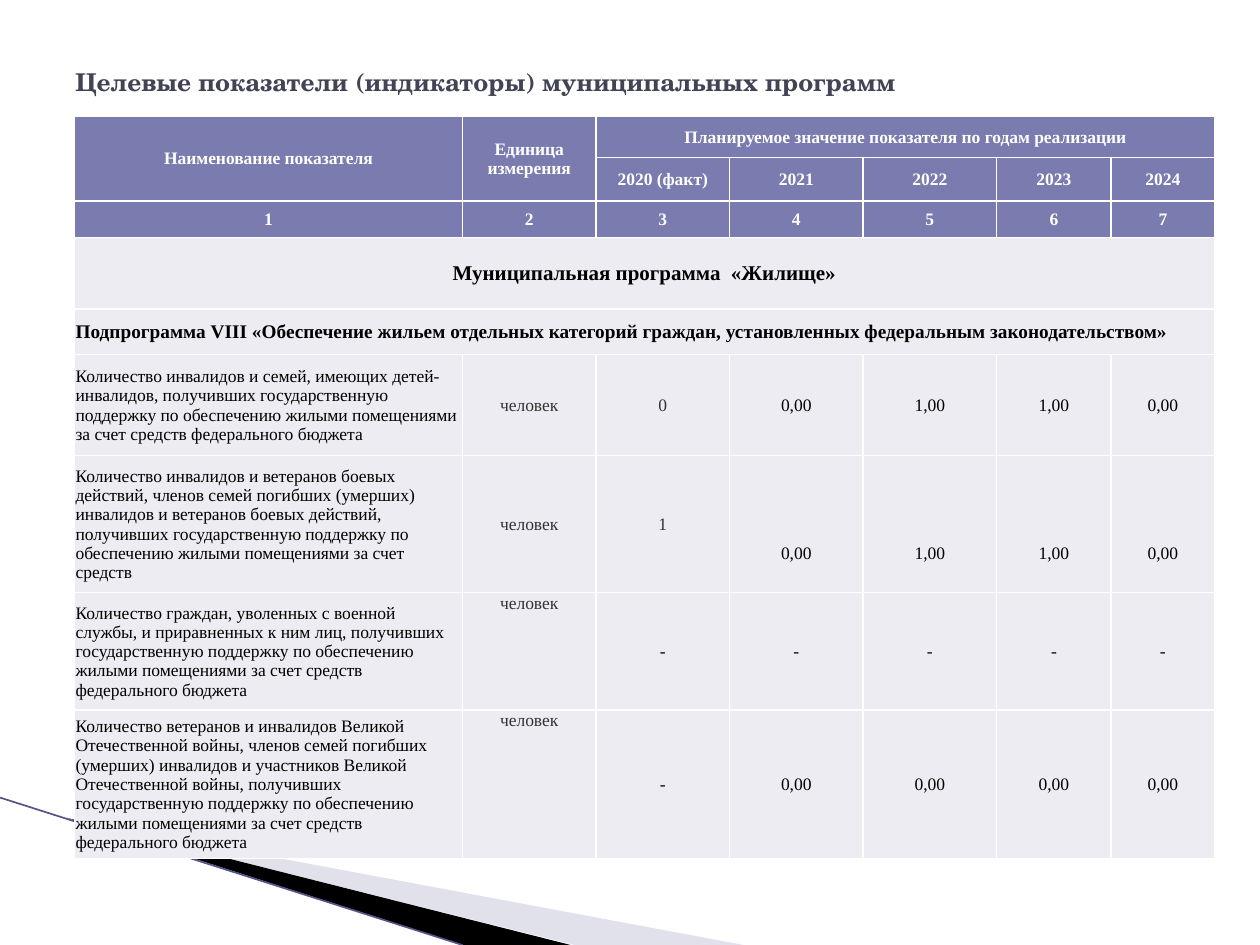
"""Build a slide with a table of municipal programme targets."""
from lxml import etree
from pptx import Presentation
from pptx.dml.color import RGBColor
from pptx.enum import shapes, text
from pptx.oxml import parse_xml
from pptx.oxml.ns import nsdecls, qn
from pptx.util import Inches, Pt

WHITE = RGBColor(0xFF, 0xFF, 0xFF)
BLACK = RGBColor(0, 0, 0)
GREY = RGBColor(0x33, 0x33, 0x33)
SLATE = RGBColor(0x42, 0x44, 0x56)
HEAD = RGBColor(0x7A, 0x7B, 0xAE)
PALE = RGBColor(0xEC, 0xEC, 0xF2)
LILAC = RGBColor(0xB6, 0xB6, 0xD1)
INDIGO = RGBColor(0x53, 0x54, 0x8A)
MID, TOP = text.MSO_ANCHOR.MIDDLE, text.MSO_ANCHOR.TOP
LEFT, MIDST = text.PP_ALIGN.LEFT, text.PP_ALIGN.CENTER


def write(frame, words, size=10, color=BLACK, bold=False, align=MIDST,
          face="Times New Roman"):
    para = frame.paragraphs[0]
    para.alignment = align
    run = para.add_run()
    run.text = words
    font = run.font
    font.name, font.size, font.bold = face, Pt(size), bold
    font.color.rgb = color


def dress(cell, fill, anchor=MID, top=0.01):
    cell.margin_left = cell.margin_right = Inches(0.01)
    cell.margin_top, cell.margin_bottom = Inches(top), 0
    cell.vertical_anchor = anchor
    props = cell._tc.get_or_add_tcPr()
    for side in "LRTB":
        props.append(parse_xml(
            f'<a:ln{side} {nsdecls("a")} w="12700"><a:solidFill>'
            f'<a:srgbClr val="{WHITE}"/></a:solidFill></a:ln{side}>'))
    cell.fill.solid()
    cell.fill.fore_color.rgb = fill


deck = Presentation()
deck.slide_width, deck.slide_height = Inches(10), Inches(7.5)
slide = deck.slides.add_slide(deck.slide_layouts[6])
parts = slide.shapes

wedges = [
    ([(0.55, 6.5), (5.9, 7.5), (4.56, 7.5)], LILAC, 40),
    ([(0.53, 6.49), (4.53, 7.5), (3.68, 7.5)], BLACK, 100),
]
for points, color, alpha in wedges:
    spots = [(Inches(x), Inches(y)) for x, y in points]
    pen = parts.build_freeform(*spots[0])
    pen.add_line_segments(spots[1:])
    wedge = pen.convert_to_shape()
    wedge.shadow.inherit = False
    wedge.line.fill.background()
    wedge.fill.solid()
    wedge.fill.fore_color.rgb = color
    if alpha < 100:
        tint = wedge._element.spPr.find(".//" + qn("a:srgbClr"))
        etree.SubElement(tint, qn("a:alpha"), val=str(alpha * 1000))

edge = parts.add_connector(shapes.MSO_CONNECTOR.STRAIGHT, Inches(0),
                           Inches(6.33), Inches(3.67), Inches(7.5))
edge.line.color.rgb = INDIGO
edge.line.width = Pt(0.95)
etree.SubElement(edge._element.spPr, qn("a:effectLst"))

title = parts.add_textbox(Inches(0.5), Inches(0.3), Inches(9), Inches(0.69))
title.text_frame.word_wrap = True
title.text_frame.vertical_anchor = MID
write(title.text_frame, "Целевые показатели (индикаторы) муниципальных программ",
      size=14, color=SLATE, bold=True, align=LEFT, face="TeX Gyre Schola")

wide = [3.08, 1.06, 1.06, 1.06, 1.06, 0.91, 0.82]
tall = [0.33, 0.32, 0.29, 0.57, 0.36, 0.8, 1.09, 0.93, 1.08]
frame = parts.add_table(len(tall), len(wide), Inches(0.59), Inches(0.92),
                        Inches(sum(wide)), Inches(sum(tall)))
table = frame.table
table.first_row = table.horz_banding = False
for col, width in zip(table.columns, wide):
    col.width = Inches(width)
for row, height in zip(table.rows, tall):
    row.height = Inches(height)

for r1, c1, r2, c2 in [(0, 0, 1, 0), (0, 1, 1, 1), (0, 2, 0, 6),
                       (3, 0, 3, 6), (4, 0, 4, 6)]:
    table.cell(r1, c1).merge(table.cell(r2, c2))

heads = [
    ["Наименование показателя", "Единица измерения",
     "Планируемое значение показателя по годам реализации"],
    ["", "", "2020 (факт)", "2021", "2022", "2023", "2024"],
    [str(n) for n in range(1, 8)],
]
for r, names in enumerate(heads):
    for c in range(len(wide)):
        dress(table.cell(r, c), HEAD)
    for c, name in enumerate(names):
        if name:
            write(table.cell(r, c).text_frame, name, color=WHITE, bold=True)

bands = [
    ("Муниципальная программа  «Жилище»", 12, MIDST),
    ("Подпрограмма VIII «Обеспечение жильем отдельных категорий граждан, "
     "установленных федеральным законодательством»", 11, LEFT),
]
for r, (name, size, align) in enumerate(bands, len(heads)):
    for c in range(len(wide)):
        dress(table.cell(r, c), PALE)
    write(table.cell(r, 0).text_frame, name, size=size, bold=True, align=align)

goals = [
    ("Количество инвалидов и семей, имеющих детей-инвалидов, получивших "
     "государственную поддержку по обеспечению жилыми помещениями за счет "
     "средств федерального бюджета",
     ["0", "0,00", "1,00", "1,00", "0,00"], MID, GREY, 0.01),
    ("Количество инвалидов и ветеранов боевых действий, членов семей погибших "
     "(умерших) инвалидов и ветеранов боевых действий, получивших "
     "государственную поддержку по обеспечению жилыми помещениями за счет "
     "средств",
     ["1", "0,00", "1,00", "1,00", "0,00"], MID, GREY, 0.47),
    ("Количество граждан, уволенных с военной службы, и приравненных к ним "
     "лиц, получивших государственную поддержку по обеспечению жилыми "
     "помещениями за счет средств федерального бюджета",
     ["-"] * 5, TOP, BLACK, 0.01),
    ("Количество ветеранов и инвалидов Великой Отечественной войны, членов "
     "семей погибших (умерших) инвалидов и участников Великой Отечественной "
     "войны, получивших государственную поддержку по обеспечению жилыми "
     "помещениями за счет средств федерального бюджета",
     ["-"] + ["0,00"] * 4, TOP, BLACK, 0.01),
]
for r, (name, sums, anchor, fact, drop) in enumerate(goals, 5):
    for c, words in enumerate([name, "человек"] + sums):
        cell = table.cell(r, c)
        dress(cell, PALE, anchor=anchor if c == 1 else MID,
              top=drop if c > 2 else 0.01)
        write(cell.text_frame, words, align=MIDST if c else LEFT,
              color={1: GREY, 2: fact}.get(c, BLACK))

deck.save("out.pptx")
